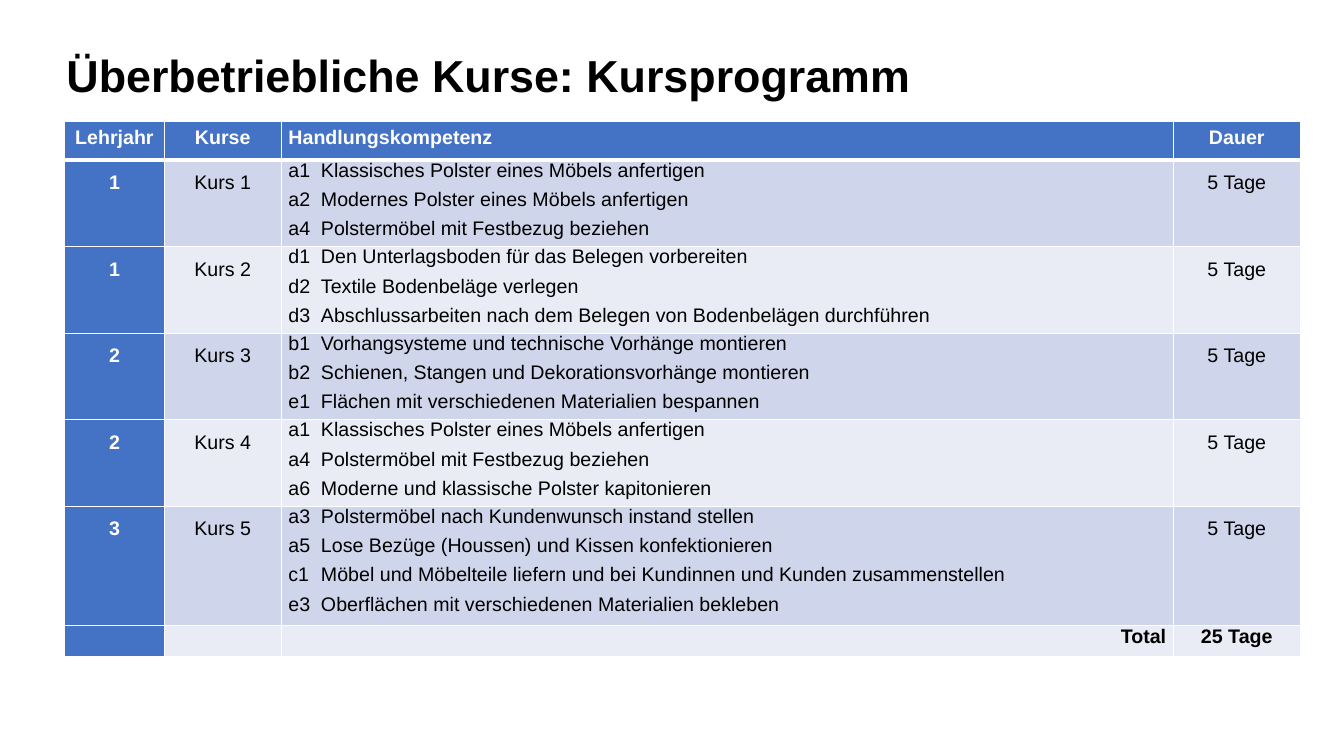
import dataclasses

import pptx
import pptx.dml.color
import pptx.enum.text
import pptx.oxml
import pptx.oxml.ns
import pptx.util

Cm = pptx.util.Cm
Pt = pptx.util.Pt
Align = pptx.enum.text.PP_ALIGN
Anchor = pptx.enum.text.MSO_ANCHOR


# Colours and type sizes
@dataclasses.dataclass(frozen=True)
class Theme:
    font: str = "Arial"
    head: int = 32
    body: int = 14
    ink: str = "000000"
    white: str = "FFFFFF"
    blue: str = "4472C4"
    bands: tuple = ("CFD5EA", "E9EBF5")
    gap: int = 3
    thin: int = 1
    thick: int = 3


THEME = Theme()

# Table content: year, course, skills, length
HEADS = ("Lehrjahr", "Kurse", "Handlungskompetenz", "Dauer")
COURSES = (
    ("1", "Kurs 1", (
        "a1 Klassisches Polster eines Möbels anfertigen",
        "a2 Modernes Polster eines Möbels anfertigen",
        "a4 Polstermöbel mit Festbezug beziehen"), "5 Tage"),
    ("1", "Kurs 2", (
        "d1 Den Unterlagsboden für das Belegen vorbereiten",
        "d2 Textile Bodenbeläge verlegen",
        "d3 Abschlussarbeiten nach dem Belegen von Bodenbelägen durchführen"), "5 Tage"),
    ("2", "Kurs 3", (
        "b1 Vorhangsysteme und technische Vorhänge montieren",
        "b2 Schienen, Stangen und Dekorationsvorhänge montieren",
        "e1 Flächen mit verschiedenen Materialien bespannen"), "5 Tage"),
    ("2", "Kurs 4", (
        "a1 Klassisches Polster eines Möbels anfertigen",
        "a4 Polstermöbel mit Festbezug beziehen",
        "a6 Moderne und klassische Polster kapitonieren"), "5 Tage"),
    ("3", "Kurs 5", (
        "a3 Polstermöbel nach Kundenwunsch instand stellen",
        "a5 Lose Bezüge (Houssen) und Kissen konfektionieren",
        "c1 Möbel und Möbelteile liefern und bei Kundinnen und Kunden zusammenstellen",
        "e3 Oberflächen mit verschiedenen Materialien bekleben"), "5 Tage"),
)
TOTAL = ("", "", "Total", "25 Tage")

WIDTHS = (2.51, 2.95, 22.48, 3.2)
HEIGHTS = (0.99, 2.18, 2.18, 2.18, 2.18, 3, 0.56)
SKILL = 2
TAB = Cm(0.82)


def tint(code):
    return pptx.dml.color.RGBColor.from_string(code)


def style(para, size, color, bold):
    for run in para.runs:
        run.font.name = THEME.font
        run.font.size = Pt(size)
        run.font.bold = bold
        run.font.color.rgb = tint(color)


def add_tab(para):
    props = para._p.get_or_add_pPr()
    stops = pptx.oxml.parse_xml(
        f'<a:tabLst {pptx.oxml.ns.nsdecls("a")}><a:tab pos="{TAB}" algn="l"/></a:tabLst>')
    props.append(stops)


def add_edge(cell, side, width):
    props = cell._tc.get_or_add_tcPr()
    props.append(pptx.oxml.parse_xml(
        f'<a:ln{side} {pptx.oxml.ns.nsdecls("a")} w="{Pt(width)}">'
        f'<a:solidFill><a:srgbClr val="{THEME.white}"/></a:solidFill></a:ln{side}>'))


def fill_cell(cell, lines, fill, color, bold, align, pitch, top, base):
    # Edges come before the fill in the cell properties
    for side, width in zip("LRTB", (THEME.thin, THEME.thin, top, base)):
        add_edge(cell, side, width)
    cell.fill.solid()
    cell.fill.fore_color.rgb = tint(fill)
    cell.margin_left = cell.margin_right = Cm(0.18)
    cell.margin_top = cell.margin_bottom = 0

    frame = cell.text_frame
    frame.text = "\n".join(lines)
    for i, para in enumerate(frame.paragraphs):
        para.alignment = align
        para.line_spacing = Pt(pitch)
        para.space_before = Pt(THEME.gap if i else 0)
        para.space_after = Pt(THEME.gap)
        if "\t" in para.text:
            add_tab(para)
        style(para, THEME.body, color, bold)


def add_title(slide, text):
    title = slide.shapes.title
    title.left, title.top = Cm(1.42), Cm(1.02)
    title.width, title.height = Cm(31.83), Cm(1.88)
    frame = title.text_frame
    frame.text = text
    frame.word_wrap = True
    frame.auto_size = pptx.enum.text.MSO_AUTO_SIZE.NONE
    frame.vertical_anchor = Anchor.MIDDLE
    para = frame.paragraphs[0]
    para.alignment = Align.LEFT
    para.line_spacing = 0.9
    style(para, THEME.head, THEME.ink, True)


def add_plan(slide):
    rows = (HEADS, *COURSES, TOTAL)
    last = len(rows) - 1
    grid = slide.shapes.add_table(
        len(rows), len(HEADS), Cm(1.63), Cm(3.05),
        Cm(sum(WIDTHS)), Cm(sum(HEIGHTS))).table
    for col, width in zip(grid.columns, WIDTHS):
        col.width = Cm(width)
    for row, height in zip(grid.rows, HEIGHTS):
        row.height = Cm(height)

    for r, row in enumerate(rows):
        for c, item in enumerate(row):
            skills = isinstance(item, tuple)
            lines = [s.replace(" ", "\t", 1) for s in item] if skills else [item]
            dark = r == 0 or c == 0
            align = Align.CENTER
            if c == SKILL:
                align = Align.RIGHT if r == last else Align.LEFT
            pitch = 15 if skills else {0: 20, last: 16}.get(r, 24)
            fill_cell(
                grid.cell(r, c), lines,
                fill=THEME.blue if dark else THEME.bands[(r - 1) % 2],
                color=THEME.white if dark else THEME.ink,
                bold=dark or r == last,
                align=align, pitch=pitch,
                top=THEME.thick if r == 1 else THEME.thin,
                base=THEME.thick if r == 0 else THEME.thin)


def main():
    deck = pptx.Presentation()
    deck.slide_width, deck.slide_height = Cm(33.87), Cm(19.05)
    slide = deck.slides.add_slide(deck.slide_layouts[5])
    add_title(slide, "Überbetriebliche Kurse: Kursprogramm")
    add_plan(slide)
    deck.save("out.pptx")


if __name__ == "__main__":
    main()
